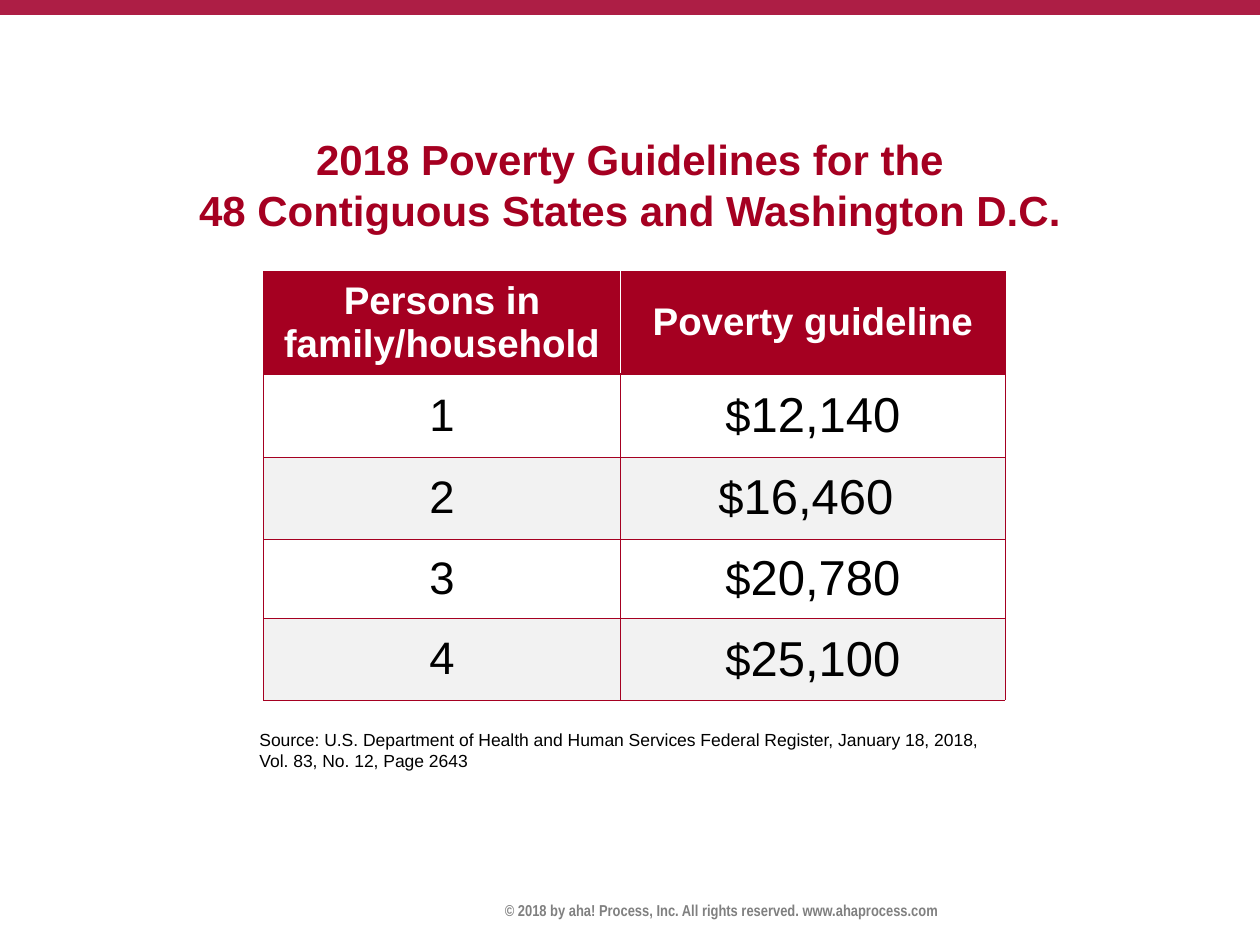
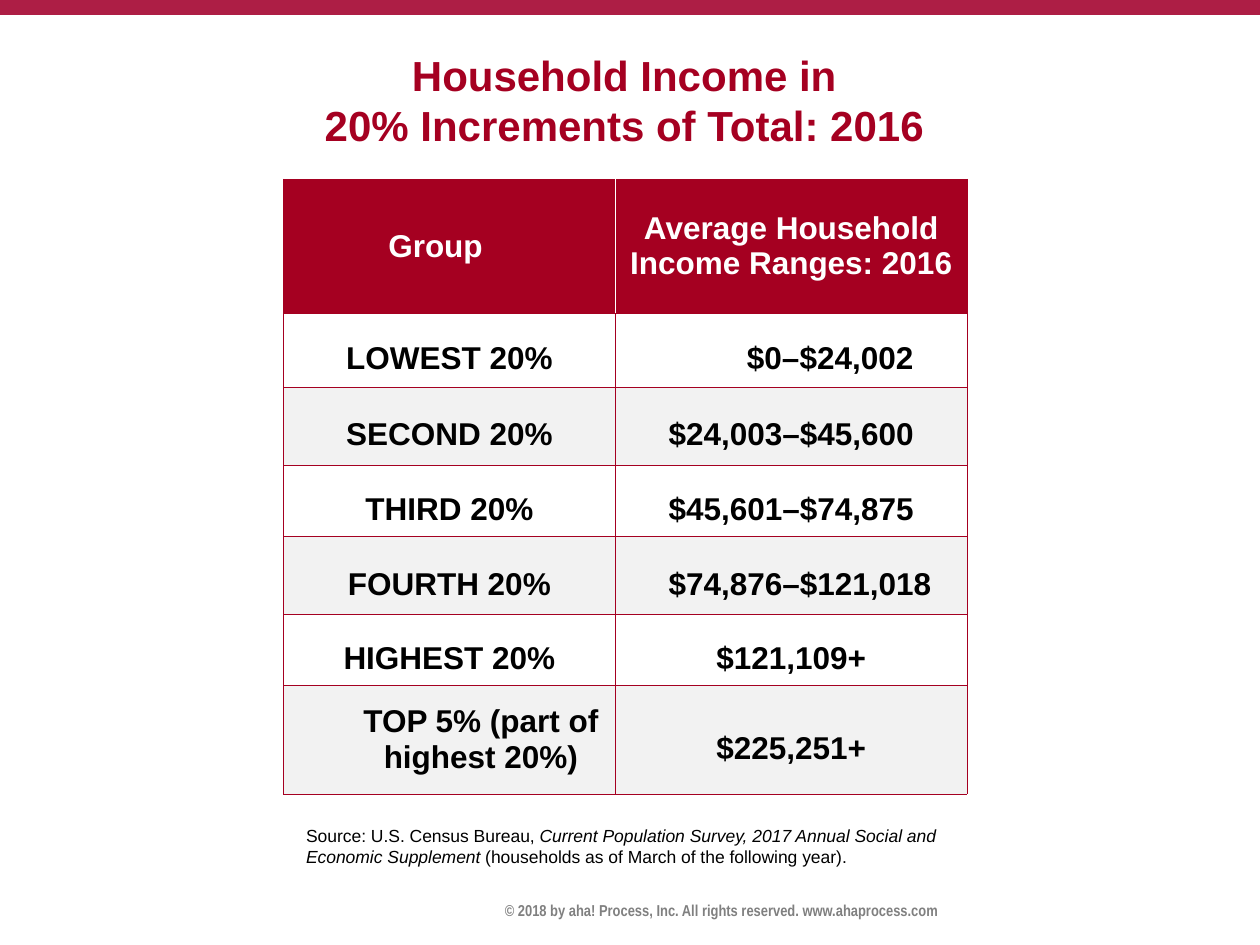
"""Build two slides of United States poverty and household income figures."""
from lxml.etree import SubElement
from pptx import Presentation
from pptx.dml.color import RGBColor
from pptx.enum.shapes import MSO_SHAPE as Shape
from pptx.enum.text import MSO_ANCHOR as Anchor, PP_ALIGN as Align
from pptx.oxml.ns import qn
from pptx.util import Cm, Pt

CRIMSON = RGBColor(0xA5, 0x00, 0x21)
BAND_RED = RGBColor(0xAD, 0x1E, 0x45)
GREY = RGBColor(0x80, 0x80, 0x80)
PALE = RGBColor(0xF2, 0xF2, 0xF2)
WHITE = RGBColor(0xFF, 0xFF, 0xFF)
BLACK = RGBColor(0x00, 0x00, 0x00)

WIDTH, HEIGHT = 25.4, 19.05
FOOTER = "© 2018 by aha! Process, Inc. All rights reserved. www.ahaprocess.com"
DOLLAR_SIZE = 26

POVERTY = {
    "title": ["2018 Poverty Guidelines for the", "48 Contiguous States and Washington D.C."],
    "title_at": (0, 2.34, WIDTH, 2.74),
    "source": [
        [("Source: U.S. Department of Health and Human Services Federal Register, January 18, 2018,", False)],
        [("Vol. 83, No. 12, Page 2643", False)],
    ],
    "source_at": (4.98, 14.58, 15.42, 1.12),
    "table_at": (5.31, 5.47),
    "columns": [7.2, 7.75],
    "heights": [2.06, 1.68, 1.65, 1.6, 1.65],
    "rows": [
        ("Persons in family/household", "Poverty guideline"),
        ("1", "$12,140"),
        ("2", "$16,460"),
        ("3", "$20,780"),
        ("4", "$25,100"),
    ],
    "nudges": {(2, 1): (0, 0.28)},
    "margins": (0.33, 0.1),
    "header_size": 22,
    "body_sizes": (26, 28),
    "body_bold": False,
    "body_spacing": 1,
    "single_spaced": [],
}

INCOME = {
    "title": ["Household Income in", "20% Increments of Total: 2016"],
    "title_at": (5.7, 0.64, 13.77, 2.74),
    "source": [[
        ("Source: U.S. Census Bureau, ", False),
        ("Current Population Survey, 2017 Annual Social and Economic Supplement ", True),
        ("(households as of March of the following year).", False),
    ]],
    "source_at": (5.92, 16.51, 13.34, 1.12),
    "table_at": (5.71, 3.61),
    "columns": [6.7, 7.08],
    "heights": [2.71, 1.48, 1.58, 1.43, 1.58, 1.43, 2.18],
    "rows": [
        ("Group", "Average Household Income Ranges: 2016"),
        ("LOWEST 20%", "$0–$24,002"),
        ("SECOND 20%", "$24,003–$45,600"),
        ("THIRD 20%", "$45,601–$74,875"),
        ("FOURTH 20%", "$74,876–$121,018"),
        ("HIGHEST 20%", "$121,109+"),
        ("TOP 5% (part of highest 20%)", "$225,251+"),
    ],
    "nudges": {(0, 0): (0, 0.56), (1, 1): (1.57, 0), (4, 1): (0.35, 0), (6, 0): (1.27, 0)},
    "margins": (0.18, 0),
    "header_size": 18,
    "body_sizes": (18, 18),
    "body_bold": True,
    "body_spacing": 1.5,
    "single_spaced": [(6, 0)],
}


def style(para, size, color, bold=False, name="Arial", align=Align.CENTER):
    """Set the font and alignment of a paragraph."""
    para.alignment = align
    font = para.font
    font.name, font.size, font.bold = name, Pt(size), bold
    font.color.rgb = color


def add_box(page, at, lines, anchor=Anchor.TOP, **look):
    """Add a text box whose lines are lists of (text, italic) spans."""
    frame = page.shapes.add_textbox(*map(Cm, at)).text_frame
    frame.word_wrap = True
    frame.vertical_anchor = anchor
    for number, spans in enumerate(lines):
        para = frame.add_paragraph() if number else frame.paragraphs[0]
        style(para, **look)
        for text, italic in spans:
            span = para.add_run()
            span.text = text
            if italic:
                span.font.italic = True


def set_borders(cell, colors):
    """Draw hairlines on the left, right, top and bottom of a cell."""
    properties = cell._tc.get_or_add_tcPr()
    for place, (side, color) in enumerate(zip("LRTB", colors)):
        line = SubElement(properties, qn(f"a:ln{side}"), w="3175")
        fill = SubElement(line, qn("a:solidFill"))
        SubElement(fill, qn("a:srgbClr"), val=str(color))
        properties.insert(place, line)


def fill_cell(cell, row, column, text, content):
    """Write one table cell with its fill, margins and borders."""
    is_header = row == 0
    left, right = content["nudges"].get((row, column), (0, 0))
    side, edge = content["margins"]
    cell.margin_left, cell.margin_right = Cm(side + left), Cm(side + right)
    cell.margin_top = cell.margin_bottom = Cm(edge)
    cell.vertical_anchor = Anchor.MIDDLE
    cell.fill.solid()
    cell.fill.fore_color.rgb = CRIMSON if is_header else WHITE if row % 2 else PALE
    inner = WHITE if is_header else CRIMSON
    set_borders(cell, [inner if column else CRIMSON, CRIMSON if column else inner, CRIMSON, CRIMSON])

    para = cell.text_frame.paragraphs[0]
    if is_header:
        style(para, content["header_size"], WHITE, True)
    else:
        size = content["body_sizes"][column]
        style(para, size, BLACK, content["body_bold"])
        if (row, column) not in content["single_spaced"]:
            para.line_spacing = content["body_spacing"]
        if size > DOLLAR_SIZE:
            sign = para.add_run()
            sign.text, text = text[0], text[1:]
            sign.font.size = Pt(DOLLAR_SIZE)
    para.add_run().text = text


def add_figures(page, content):
    """Add the table of figures."""
    rows, columns, heights = content["rows"], content["columns"], content["heights"]
    size = sum(columns), sum(heights)
    table = page.shapes.add_table(
        len(rows), len(columns), *map(Cm, content["table_at"] + size)).table
    table.first_row = table.horz_banding = False
    for column, width in zip(table.columns, columns):
        column.width = Cm(width)
    for row, height in zip(table.rows, heights):
        row.height = Cm(height)
    for row, texts in enumerate(rows):
        for column, text in enumerate(texts):
            fill_cell(table.cell(row, column), row, column, text, content)


def add_page(deck, content):
    """Add a slide with the shared band, footer and title style."""
    page = deck.slides.add_slide(deck.slide_layouts[6])
    add_box(page, (5.56, 18.03, 17.96, 0.64), [[(FOOTER, False)]],
            size=9, color=GREY, bold=True, name="Arial Narrow")
    band = page.shapes.add_shape(Shape.RECTANGLE, 0, 0, Cm(WIDTH), Cm(0.3))
    band.shadow.inherit = False
    band.fill.solid()
    band.fill.fore_color.rgb = BAND_RED
    band.line.fill.background()
    add_box(page, content["title_at"], [[(line, False)] for line in content["title"]],
            Anchor.MIDDLE, size=24, color=CRIMSON, bold=True)
    add_box(page, content["source_at"], content["source"],
            size=10, color=BLACK, align=Align.LEFT)
    add_figures(page, content)


def main():
    """Build and save the deck."""
    deck = Presentation()
    deck.slide_width, deck.slide_height = Cm(WIDTH), Cm(HEIGHT)
    for content in (POVERTY, INCOME):
        add_page(deck, content)
    deck.save("out.pptx")


if __name__ == "__main__":
    main()
